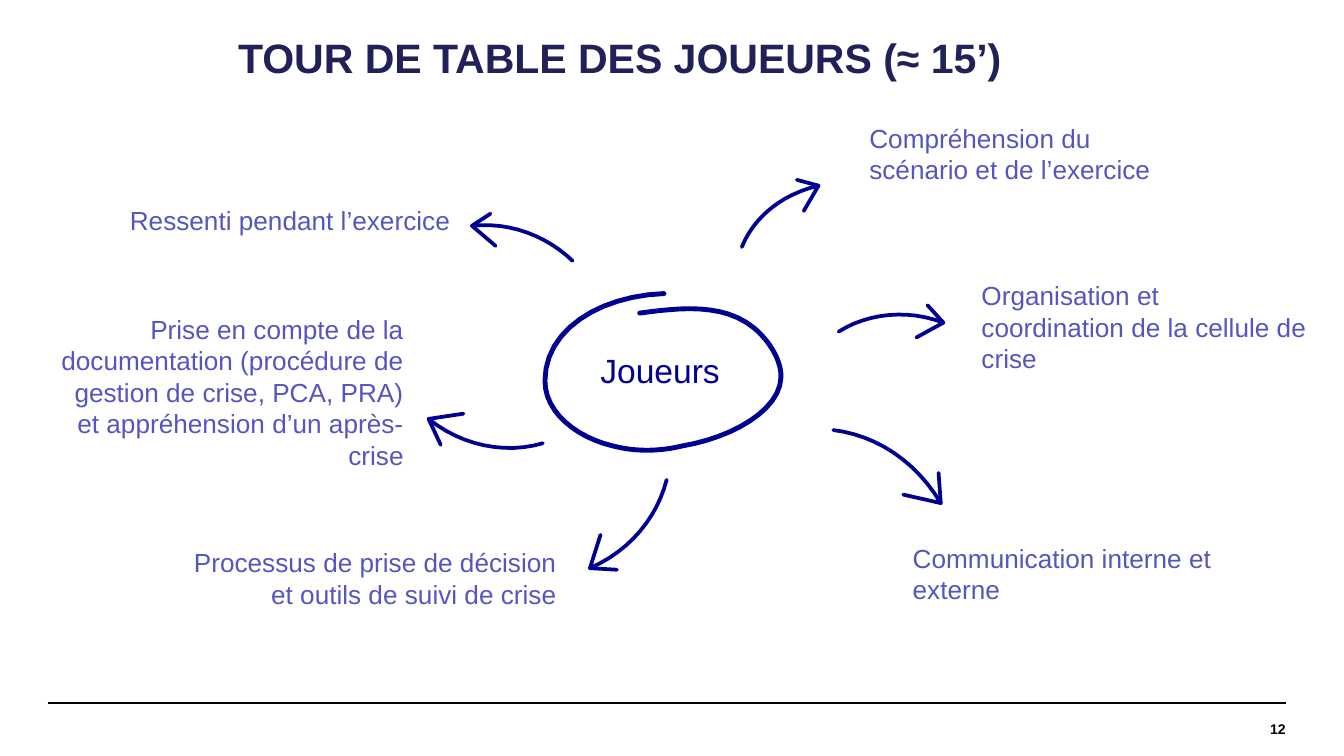
import lxml.etree
import pptx
import pptx.dml.color
import pptx.enum.shapes
import pptx.enum.text
import pptx.oxml.ns
import pptx.util

Cm = pptx.util.Cm
Pt = pptx.util.Pt
ALIGN = pptx.enum.text.PP_ALIGN
ANCHOR = pptx.enum.text.MSO_ANCHOR
AUTO_SIZE = pptx.enum.text.MSO_AUTO_SIZE

COLORS = {"title": "21215A", "topic": "5555C1", "ink": "000091", "footer": "000000"}

TOPICS = [
    ("Ressenti pendant l’exercice", (2.08, 3.73, 6.68, 0.86), ALIGN.RIGHT),
    ("Processus de prise de décision et outils de suivi de crise",
     (2.92, 10.21, 7.85, 1.45), ALIGN.RIGHT),
    ("Prise en compte de la documentation (procédure de gestion de crise, PCA, "
     "PRA) et appréhension d’un après-crise", (0.62, 5.8, 7.26, 2.64), ALIGN.RIGHT),
    ("Compréhension du scénario et de l’exercice", (16.18, 2.18, 6.68, 1.45), ALIGN.LEFT),
    ("Organisation et coordination de la cellule de crise",
     (18.3, 5.16, 6.68, 1.45), ALIGN.LEFT),
    ("Communication interne et externe", (17, 10.12, 7.24, 1.45), ALIGN.LEFT),
]

ARROWS = [
    {"shaft": [(10.82, 4.93), (10.34, 4.47), (9.65, 4.19), (8.92, 4.27)],
     "barbs": [(9.27, 4.04), (9.37, 4.65)]},
    {"shaft": [(12.6, 9.07), (12.42, 9.78), (11.91, 10.41), (11.15, 10.74)],
     "barbs": [(11.66, 10.77), (11.35, 10.11)]},
    {"shaft": [(10.26, 8.38), (9.55, 8.59), (8.74, 8.43), (8.1, 7.92)],
     "barbs": [(8.76, 7.82), (8.33, 8.41)]},
    {"shaft": [(14.02, 4.67), (14.25, 4.11), (14.76, 3.68), (15.47, 3.51)],
     "barbs": [(15.06, 3.4), (15.19, 3.99)]},
    {"shaft": [(15.85, 6.27), (16.41, 5.92), (17.15, 5.84), (17.83, 6.1)],
     "barbs": [(17.53, 5.77), (17.32, 6.38)]},
    {"shaft": [(15.75, 8.13), (16.56, 8.23), (17.3, 8.71), (17.78, 9.51)],
     "barbs": [(17.74, 8.94), (17.07, 9.35)]},
]

RING = [
    (12.09, 5.92), (12.83, 5.82), (13.67, 5.72),
    (14.25, 6.2), (14.5, 6.4), (14.78, 6.8),
    (14.76, 7.14), (14.74, 7.75), (13.85, 8.27),
    (12.9, 8.43), (12.45, 8.54), (12, 8.54),
    (11.58, 8.43), (10.9, 8.27), (10.3, 7.8),
    (10.3, 7.2), (10.3, 6.25), (11.3, 5.6), (12.55, 5.55),
]


def color(name):
    """Return the palette colour with the given name."""
    return pptx.dml.color.RGBColor.from_string(COLORS[name])


def write(shape, text, size, color_name, alignment, bold=False):
    """Write one formatted run into the first paragraph of a shape."""
    shape.text_frame.word_wrap = True
    paragraph = shape.text_frame.paragraphs[0]
    paragraph.alignment = alignment
    run = paragraph.add_run()
    run.text = text
    run.font.name = "Arial"
    run.font.size = Pt(size)
    run.font.bold = bold
    run.font.color.rgb = color(color_name)
    return paragraph


def add_text(slide, box, text, size, color_name, alignment, bold=False):
    """Add a wrapping text box in the given box."""
    shape = slide.shapes.add_textbox(*map(Cm, box))
    write(shape, text, size, color_name, alignment, bold)
    return shape


def curve_points(controls, steps=12):
    """Sample a chain of cubic curves into points."""
    points = [controls[0]]
    for first in range(0, len(controls) - 1, 3):
        segment = controls[first:first + 4]
        for step in range(1, steps + 1):
            t = step / steps
            weights = ((1 - t) ** 3, 3 * t * (1 - t) ** 2, 3 * t ** 2 * (1 - t), t ** 3)
            points.append(tuple(
                sum(weight * point[axis] for weight, point in zip(weights, segment))
                for axis in (0, 1)))
    return points


def add_stroke(slide, strokes, width):
    """Draw open strokes as one freeform with round ends."""
    first, *others = [[(Cm(x), Cm(y)) for x, y in stroke] for stroke in strokes]
    builder = slide.shapes.build_freeform(*first[0])
    builder.add_line_segments(first[1:], close=False)
    for stroke in others:
        builder.move_to(*stroke[0])
        builder.add_line_segments(stroke[1:], close=False)
    shape = builder.convert_to_shape()
    shape.shadow.inherit = False
    shape.fill.background()
    shape.line.color.rgb = color("ink")
    shape.line.width = Pt(width)
    shape._element.spPr.find(pptx.oxml.ns.qn("a:ln")).set("cap", "rnd")


def add_title(slide, box):
    """Place the title placeholder in the given box."""
    title = slide.shapes.title
    title.left, title.top, title.width, title.height = map(Cm, box)
    frame = title.text_frame
    frame.auto_size = AUTO_SIZE.NONE
    frame.vertical_anchor = ANCHOR.MIDDLE
    frame.margin_left = Cm(0.3)
    paragraph = write(title, "TOUR DE TABLE DES JOUEURS (≈ 15’)", 22, "title", ALIGN.LEFT, True)
    paragraph.line_spacing = 0.9


def add_center(slide, box):
    """Draw the ring and its label in the given label box."""
    add_stroke(slide, [curve_points(RING)], 2.6)
    label = add_text(slide, box, "Joueurs", 18, "ink", ALIGN.CENTER)
    label.text_frame.auto_size = AUTO_SIZE.SHAPE_TO_FIT_TEXT


def add_topics(slide):
    """Place each topic and the arrow that leads to it."""
    for (text, box, alignment), arrow in zip(TOPICS, ARROWS):
        topic = add_text(slide, box, text, 14, "topic", alignment)
        topic.text_frame.auto_size = AUTO_SIZE.SHAPE_TO_FIT_TEXT
        first_barb, second_barb = arrow["barbs"]
        head = [first_barb, arrow["shaft"][-1], second_barb]
        add_stroke(slide, [curve_points(arrow["shaft"]), head], 2)


def add_footer(slide, box):
    """Draw the rule on top of the given box and the page number at its right."""
    left, top, width, height = box
    rule = slide.shapes.add_connector(
        pptx.enum.shapes.MSO_CONNECTOR.STRAIGHT, Cm(left), Cm(top), Cm(left + width), Cm(top))
    rule.line.color.rgb = color("footer")
    rule.line.width = Pt(0.8)
    lxml.etree.SubElement(rule._element.spPr, pptx.oxml.ns.qn("a:effectLst"))
    number_width = 3.76
    number_box = (left + width - number_width, top, number_width, height)
    number = add_text(slide, number_box, "12", 7.5, "footer", ALIGN.RIGHT, True)
    frame = number.text_frame
    frame.vertical_anchor = ANCHOR.MIDDLE
    frame.margin_left = frame.margin_right = frame.margin_top = frame.margin_bottom = 0


def main():
    """Build the slide and save it."""
    presentation = pptx.Presentation()
    presentation.slide_width = Cm(25.4)
    presentation.slide_height = Cm(14.29)
    slide = presentation.slides.add_slide(presentation.slide_layouts[5])
    add_footer(slide, (0.9, 13.29, 23.4, 0.99))
    add_title(slide, (4.2, 0.28, 20.7, 1.7))
    add_topics(slide)
    add_center(slide, (10.72, 6.49, 3.51, 1.02))
    presentation.save("out.pptx")


if __name__ == "__main__":
    main()
